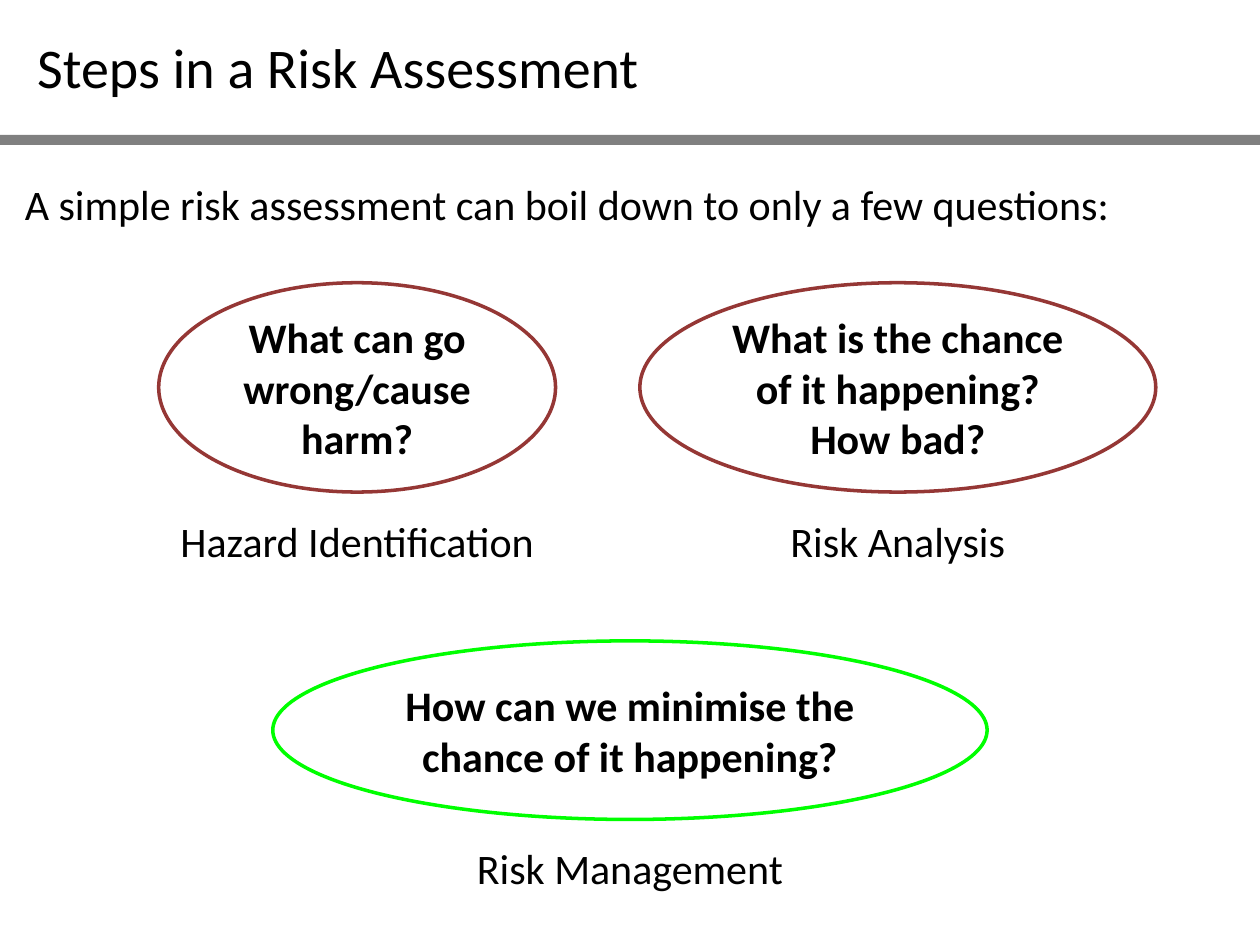
from pptx import Presentation
from pptx.dml.color import RGBColor
from pptx.enum.shapes import MSO_SHAPE
from pptx.enum.text import MSO_ANCHOR, PP_ALIGN
from pptx.util import Cm, Pt

COLOURS = {"text": "000000", "rule": "808080", "assess": "953735", "manage": "00FF00"}


def write(shape, text, size=24, bold=False, align=PP_ALIGN.LEFT):
    shape.text_frame.word_wrap = True
    para = shape.text_frame.paragraphs[0]
    para.text = text
    para.alignment = align
    para.font.name = "Calibri"
    para.font.size = Pt(size)
    para.font.bold = bold
    para.font.color.rgb = RGBColor.from_string(COLOURS["text"])


deck = Presentation()
deck.slide_width, deck.slide_height = Cm(25.4), Cm(19.05)
page = deck.slides.add_slide(deck.slide_layouts[6])

# Title, rule and introduction
title = page.shapes.add_textbox(Cm(0.5), Cm(0.53), Cm(21.8), Cm(1.62))
write(title, "Steps in a Risk Assessment", size=32)

rule = page.shapes.add_shape(MSO_SHAPE.RECTANGLE, 0, Cm(2.72), deck.slide_width, Cm(0.2))
rule.shadow.inherit = False
rule.fill.solid()
rule.fill.fore_color.rgb = RGBColor.from_string(COLOURS["rule"])
rule.line.fill.background()

intro = page.shapes.add_textbox(Cm(0.25), Cm(3.48), Cm(24.9), Cm(1.28))
write(intro, "A simple risk assessment can boil down to only a few questions:")

# Questions, each with its step name centred below: centre, top, width, height
steps = [
    ("What can go wrong/cause harm?", "Hazard Identification", "assess", 7.2, 5.7, 8, 4.22),
    ("What is the chance of it happening? How bad?", "Risk Analysis", "assess",
     18.1, 5.7, 10.4, 4.22),
    ("How can we minimise the chance of it happening?", "Risk Management", "manage",
     12.7, 12.92, 14.4, 3.6),
]
label_width = 8.76
label_gap = 0.34
for question, step, colour, centre, top, width, height in steps:
    oval = page.shapes.add_shape(
        MSO_SHAPE.OVAL, Cm(centre - width / 2), Cm(top), Cm(width), Cm(height))
    oval.shadow.inherit = False
    oval.fill.background()
    oval.line.color.rgb = RGBColor.from_string(COLOURS[colour])
    oval.line.width = Pt(2)
    oval.text_frame.vertical_anchor = MSO_ANCHOR.MIDDLE
    write(oval, question, bold=True, align=PP_ALIGN.CENTER)

    label = page.shapes.add_textbox(
        Cm(centre - label_width / 2), Cm(top + height + label_gap), Cm(label_width), Cm(1.28))
    write(label, step, align=PP_ALIGN.CENTER)

deck.save("out.pptx")
